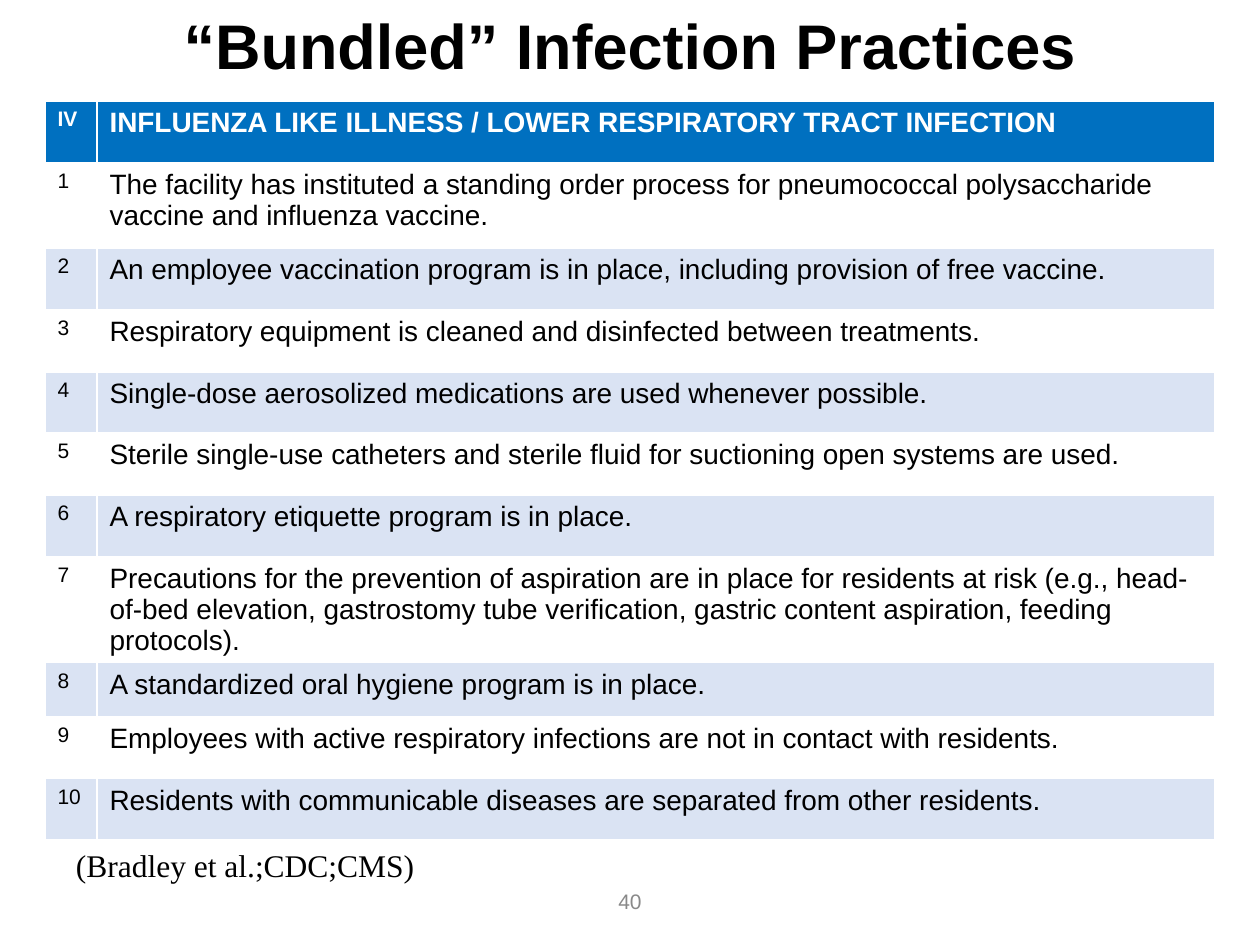
"""Build the slide on bundled infection practices for respiratory illness."""
from pptx import Presentation, util as u
from pptx.dml.color import RGBColor
from pptx.enum import text

SCALE = u.Inches(10) / 1260
BLACK = RGBColor(0x00, 0x00, 0x00)
WHITE = RGBColor(0xFF, 0xFF, 0xFF)
GRAY = RGBColor(0x89, 0x89, 0x89)
HEADER_BLUE = RGBColor(0x00, 0x70, 0xC0)
BAND_BLUE = RGBColor(0xDA, 0xE3, 0xF3)

HEADING = "INFLUENZA LIKE ILLNESS / LOWER RESPIRATORY TRACT INFECTION"
PRACTICES = [
    "The facility has instituted a standing order process for pneumococcal polysaccharide vaccine and influenza vaccine.",
    "An employee vaccination program is in place, including provision of free vaccine.",
    "Respiratory equipment is cleaned and disinfected between treatments.",
    "Single-dose aerosolized medications are used whenever possible.",
    "Sterile single-use catheters and sterile fluid for suctioning open systems are used.",
    "A respiratory etiquette program is in place.",
    "Precautions for the prevention of aspiration are in place for residents at risk (e.g., head-of-bed elevation, gastrostomy tube verification, gastric content aspiration, feeding protocols).",
    "A standardized oral hygiene program is in place.",
    "Employees with active respiratory infections are not in contact with residents.",
    "Residents with communicable diseases are separated from other residents.",
]
COLUMN_WIDTHS = [52, 1118]
ROW_HEIGHTS = [62, 85, 62, 62, 61, 62, 62, 106, 54, 62, 61]


def px(*lengths):
    return [u.Emu(round(length * SCALE)) for length in lengths]


def add_run(paragraph, words, size, color, bold=False, font="Arial"):
    run = paragraph.add_run()
    run.text = words
    run.font.name = font
    run.font.size = u.Pt(size)
    run.font.bold = bold
    run.font.color.rgb = color


presentation = Presentation()
presentation.slide_width, presentation.slide_height = px(1260, 945)
slide = presentation.slides.add_slide(presentation.slide_layouts[5])

title = slide.shapes.title
title.left, title.top, title.width, title.height = px(63, 16, 1134, 67)
title.text_frame.vertical_anchor = text.MSO_ANCHOR.MIDDLE
paragraph = title.text_frame.paragraphs[0]
paragraph.alignment = text.PP_ALIGN.CENTER
paragraph.line_spacing = 0.9
add_run(paragraph, "“Bundled” Infection Practices", 36, BLACK, bold=True)

rows = [("IV", HEADING)] + [(str(number), practice) for number, practice in enumerate(PRACTICES, 1)]
table = slide.shapes.add_table(
    len(rows), 2, *px(45, 101, sum(COLUMN_WIDTHS), sum(ROW_HEIGHTS))
).table
for column, width in zip(table.columns, px(*COLUMN_WIDTHS)):
    column.width = width
for row, height in zip(table.rows, px(*ROW_HEIGHTS)):
    row.height = height
for index, row in enumerate(rows):
    is_header = index == 0
    fill = HEADER_BLUE if is_header else (WHITE if index % 2 else BAND_BLUE)
    for column_index, (words, size) in enumerate(zip(row, (12, 16))):
        cell = table.cell(index, column_index)
        cell.fill.solid()
        cell.fill.fore_color.rgb = fill
        add_run(cell.text_frame.paragraphs[0], words, size, WHITE if is_header else BLACK, bold=is_header)

citation = slide.shapes.add_textbox(*px(0, 840, 475, 50)).text_frame
citation.word_wrap = True
citation.margin_left = px(76)[0]
citation.vertical_anchor = text.MSO_ANCHOR.MIDDLE
add_run(citation.paragraphs[0], "(Bradley et al.;CDC;CMS)", 18, BLACK, font="Times New Roman")

page_number = slide.shapes.add_textbox(*px(417, 876, 426, 50)).text_frame
page_number.word_wrap = True
page_number.vertical_anchor = text.MSO_ANCHOR.MIDDLE
page_number.paragraphs[0].alignment = text.PP_ALIGN.CENTER
add_run(page_number.paragraphs[0], "40", 12, GRAY)

presentation.save("out.pptx")
